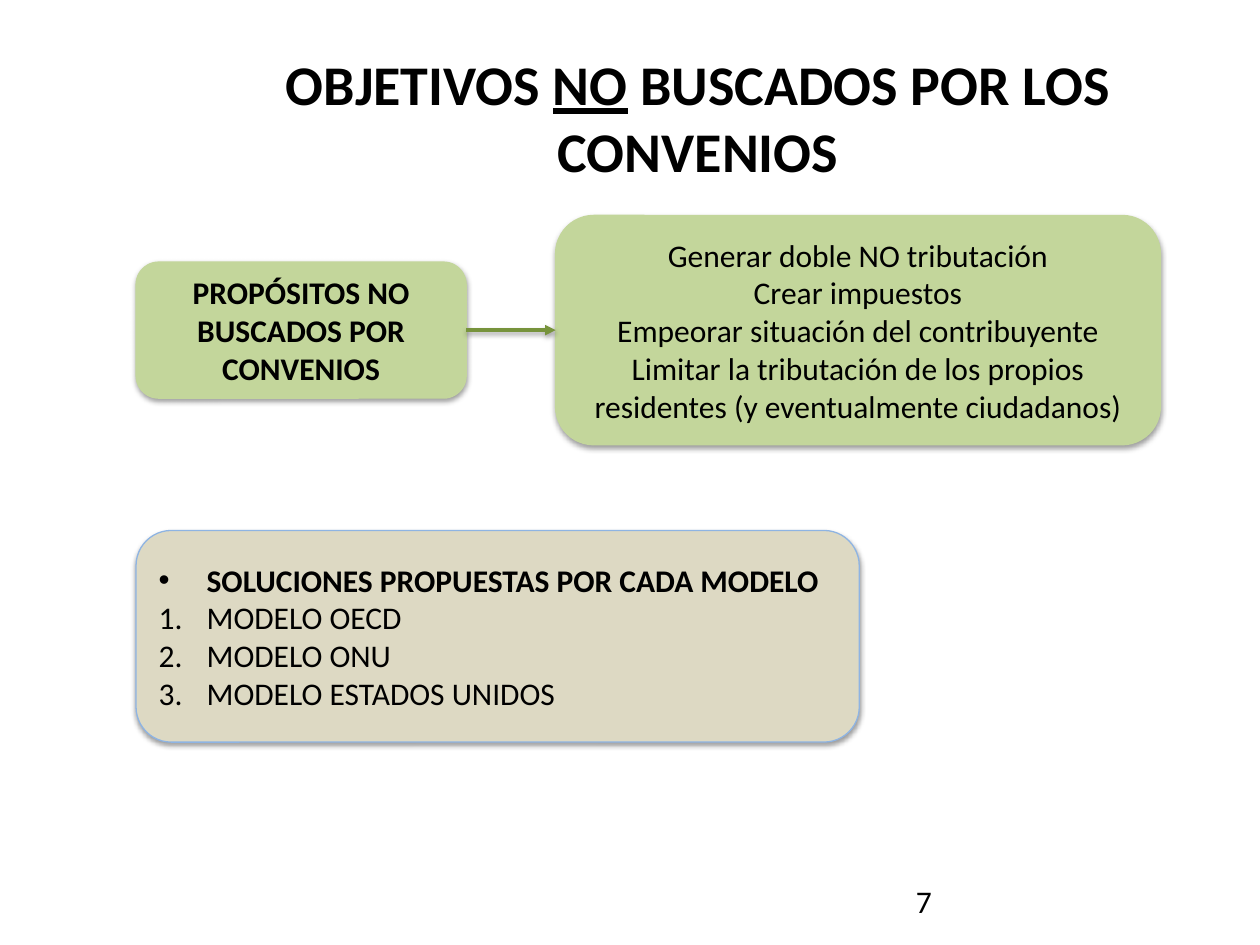
from dataclasses import dataclass

from lxml.etree import SubElement
from pptx import Presentation
from pptx.dml.color import RGBColor
from pptx.enum.shapes import MSO_CONNECTOR as Connector, MSO_SHAPE as Shape
from pptx.enum.text import MSO_ANCHOR as Anchor, PP_ALIGN as Align
from pptx.oxml.ns import qn
from pptx.util import Inches, Pt


@dataclass(frozen=True)
class Theme:
    font: str = "Calibri"
    text: str = "000000"
    green: str = "C3D69B"
    arrow: str = "77933C"
    tan: str = "DDD9C3"
    tan_edge: str = "8EB4E3"
    title_size: int = 32
    body_size: int = 18


THEME = Theme()


def color(code):
    return RGBColor.from_string(code)


def style(paragraph, size=THEME.body_size, bold=False, align=Align.LEFT):
    paragraph.alignment = align
    for run in paragraph.runs:
        font = run.font
        font.name, font.size, font.bold = THEME.font, Pt(size), bold
        font.color.rgb = color(THEME.text)


def add_soft_shadow(properties):
    effects = properties.find(qn("a:effectLst"))
    if effects is None:
        effects = SubElement(properties, qn("a:effectLst"))
    shadow = SubElement(effects, qn("a:outerShdw"), blurRad=str(Pt(3.1)),
                        dist=str(Pt(1.6)), dir="5400000", rotWithShape="0")
    black = SubElement(shadow, qn("a:srgbClr"), val=THEME.text)
    SubElement(black, qn("a:alpha"), val="38000")


def add_marker(paragraph, tag, **attributes):
    """Give the paragraph a hanging bullet or number."""
    properties = paragraph._p.get_or_add_pPr()
    properties.set("marL", str(Inches(0.38)))
    properties.set("indent", str(-Inches(0.38)))
    SubElement(properties, qn("a:buFont"), typeface="Arial" if tag == "a:buChar" else "+mj-lt")
    SubElement(properties, qn(tag), **attributes)


def add_card(slide, box, lines, fill, edge):
    card = slide.shapes.add_shape(Shape.ROUNDED_RECTANGLE, *map(Inches, box))
    card.fill.solid()
    card.fill.fore_color.rgb = color(fill)
    card.line.color.rgb = color(edge)
    card.line.width = Pt(0.75)
    card.shadow.inherit = False
    add_soft_shadow(card._element.spPr)
    frame = card.text_frame
    frame.word_wrap = True
    frame.vertical_anchor = Anchor.MIDDLE
    frame.text = "\n".join(lines)
    return card


def add_title(slide, box):
    frame = slide.shapes.add_textbox(*map(Inches, box)).text_frame
    frame.word_wrap = True
    frame.vertical_anchor = Anchor.MIDDLE
    heading = frame.paragraphs[0]
    for words in ("OBJETIVOS ", "NO", " BUSCADOS POR LOS CONVENIOS"):
        run = heading.add_run()
        run.text = words
        run.font.underline = words == "NO"
    style(heading, THEME.title_size, True, Align.CENTER)


def add_purposes(slide, box):
    """Heading card on the left, joined by an arrow to the list on the right."""
    left, top, width, height = box
    heading_width, heading_height, list_width = 2.62, 1.08, 4.8
    heading = add_card(
        slide, (left, top + (height - heading_height) / 2, heading_width, heading_height),
        ["PROPÓSITOS NO BUSCADOS POR CONVENIOS"], THEME.green, THEME.green)
    purposes = add_card(
        slide, (left + width - list_width, top, list_width, height),
        ["Generar doble NO tributación",
         "Crear impuestos",
         "Empeorar situación del contribuyente",
         "Limitar la tributación de los propios residentes (y eventualmente ciudadanos)"],
        THEME.green, THEME.green)
    for card, bold in ((heading, True), (purposes, False)):
        for paragraph in card.text_frame.paragraphs:
            style(paragraph, bold=bold, align=Align.CENTER)

    arrow = slide.shapes.add_connector(Connector.STRAIGHT, 0, 0, 0, 0)
    arrow.begin_connect(heading, 3)
    arrow.end_connect(purposes, 1)
    arrow.line.color.rgb = color(THEME.arrow)
    arrow.line.width = Pt(2)
    SubElement(arrow.line._get_or_add_ln(), qn("a:tailEnd"), type="triangle")
    add_soft_shadow(arrow._element.spPr)


def add_solutions(slide, box):
    solutions = add_card(
        slide, box,
        ["SOLUCIONES PROPUESTAS POR CADA MODELO",
         "MODELO OECD", "MODELO ONU", "MODELO ESTADOS UNIDOS"],
        THEME.tan, THEME.tan_edge)
    heading, *models = solutions.text_frame.paragraphs
    add_marker(heading, "a:buChar", char="•")
    style(heading, bold=True)
    for model in models:
        add_marker(model, "a:buAutoNum", type="arabicPeriod")
        style(model)


def add_page_number(slide, box):
    frame = slide.shapes.add_textbox(*map(Inches, box)).text_frame
    frame.word_wrap = True
    frame.text = "7"
    style(frame.paragraphs[0])


def main():
    deck = Presentation()
    deck.slide_width, deck.slide_height = Inches(10), Inches(7.5)
    slide = deck.slides.add_slide(deck.slide_layouts[6])
    margin = 1.08
    add_title(slide, (margin, 0.3, 8.92, 1.25))
    add_purposes(slide, (margin, 1.71, 8.13, 1.82))
    add_solutions(slide, (margin, 4.21, 5.74, 1.68))
    add_page_number(slide, (7.17, 6.95, 2.33, 0.4))
    deck.save("out.pptx")


if __name__ == "__main__":
    main()
